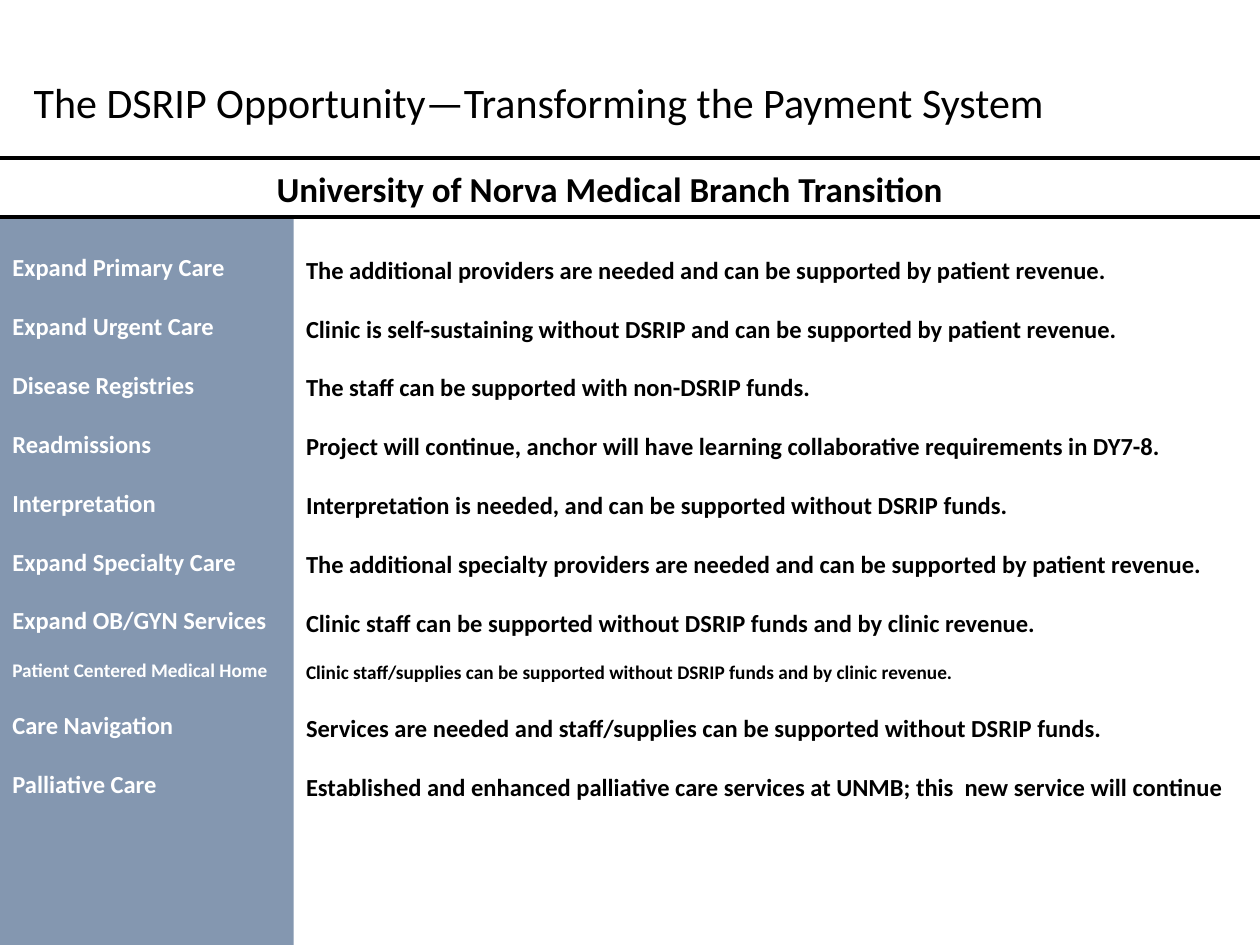
import pptx
import pptx.dml.color
import pptx.enum.shapes
import pptx.enum.text
import pptx.oxml.ns
import pptx.util
from lxml import etree

Cm, Pt = pptx.util.Cm, pptx.util.Pt

# Content: project, how it is sustained, text size
TITLE = "The DSRIP Opportunity—Transforming the Payment System"
SUBTITLE = "University of Norva Medical Branch Transition"
PROJECTS = [
    ("Expand Primary Care",
     "The additional providers are needed and can be supported by patient revenue.", 14),
    ("Expand Urgent Care",
     "Clinic is self-sustaining without DSRIP and can be supported by patient revenue.", 14),
    ("Disease Registries",
     "The staff can be supported with non-DSRIP funds.", 14),
    ("Readmissions",
     "Project will continue, anchor will have learning collaborative requirements in DY7-8.", 14),
    ("Interpretation",
     "Interpretation is needed, and can be supported without DSRIP funds.", 14),
    ("Expand Specialty Care",
     "The additional specialty providers are needed and can be supported by patient revenue.", 14),
    ("Expand OB/GYN Services",
     "Clinic staff can be supported without DSRIP funds and by clinic revenue.", 14),
    ("Patient Centered Medical Home",
     "Clinic staff/supplies can be supported without DSRIP funds and by clinic revenue.", 11),
    ("Care Navigation",
     "Services are needed and staff/supplies can be supported without DSRIP funds.", 14),
    ("Palliative Care",
     "Established and enhanced palliative care services at UNMB; this  new service will continue", 14),
]
BLACK, WHITE, SLATE = "000000", "FFFFFF", "8497B0"

# Layout in centimetres
WIDTH, HEIGHT = 25.4, 19.05
SIDEBAR_WIDTH = 5.92
TITLE_RULE, TABLE_RULE = 3.18, 4.37


def color(value):
    return pptx.dml.color.RGBColor.from_string(value)


def write(shape, lines, text_color, bold=False, spacing=None, align="LEFT"):
    """Fill a shape with one paragraph per (text, size) pair."""
    frame = shape.text_frame
    frame.word_wrap = True
    frame.vertical_anchor = pptx.enum.text.MSO_ANCHOR.TOP
    for index, (text, size) in enumerate(lines):
        paragraph = frame.add_paragraph() if index else frame.paragraphs[0]
        paragraph.alignment = getattr(pptx.enum.text.PP_ALIGN, align)
        paragraph.line_spacing = spacing
        run = paragraph.add_run()
        run.text = text
        run.font.name = "Calibri"
        run.font.size = Pt(size)
        run.font.bold = bold
        run.font.color.rgb = color(text_color)


def add_text(slide, left, top, width, height):
    return slide.shapes.add_textbox(Cm(left), Cm(top), Cm(width), Cm(height))


def add_rule(slide, top):
    rule = slide.shapes.add_connector(
        pptx.enum.shapes.MSO_CONNECTOR.STRAIGHT, Cm(0), Cm(top), Cm(WIDTH), Cm(top))
    rule.line.color.rgb = color(BLACK)
    rule.line.width = Pt(2.25)
    etree.SubElement(rule._element.spPr, pptx.oxml.ns.qn("a:effectLst"))


def main():
    presentation = pptx.Presentation()
    presentation.slide_width, presentation.slide_height = Cm(WIDTH), Cm(HEIGHT)
    slide = presentation.slides.add_slide(presentation.slide_layouts[6])

    # Sidebar with the project names
    sidebar = slide.shapes.add_shape(
        pptx.enum.shapes.MSO_SHAPE.RECTANGLE,
        Cm(0), Cm(TABLE_RULE), Cm(SIDEBAR_WIDTH), Cm(HEIGHT - TABLE_RULE))
    sidebar.shadow.inherit = False
    sidebar.fill.solid()
    sidebar.fill.fore_color.rgb = color(SLATE)
    sidebar.line.fill.background()
    write(sidebar, [(name, size) for name, _, size in PROJECTS], WHITE, True, 2.0)

    # Title, subtitle and the rules below them
    write(add_text(slide, 0.43, 1.42, 24.56, 1.27), [(TITLE, 24)], BLACK)
    for top in (TITLE_RULE, TABLE_RULE):
        add_rule(slide, top)
    subtitle = add_text(slide, -0.38, 3.28, 25.35, 0.84)
    frame = subtitle.text_frame
    frame.margin_left = frame.margin_right = frame.margin_top = frame.margin_bottom = Cm(0.1)
    write(subtitle, [(SUBTITLE, 20)], BLACK, True, align="CENTER")

    # Explanations beside the sidebar
    explanations = add_text(slide, SIDEBAR_WIDTH, TABLE_RULE + 0.05, 19.05, 12.65)
    write(explanations, [(text, size) for _, text, size in PROJECTS], BLACK, True, 2.0)

    presentation.save("out.pptx")


if __name__ == "__main__":
    main()
